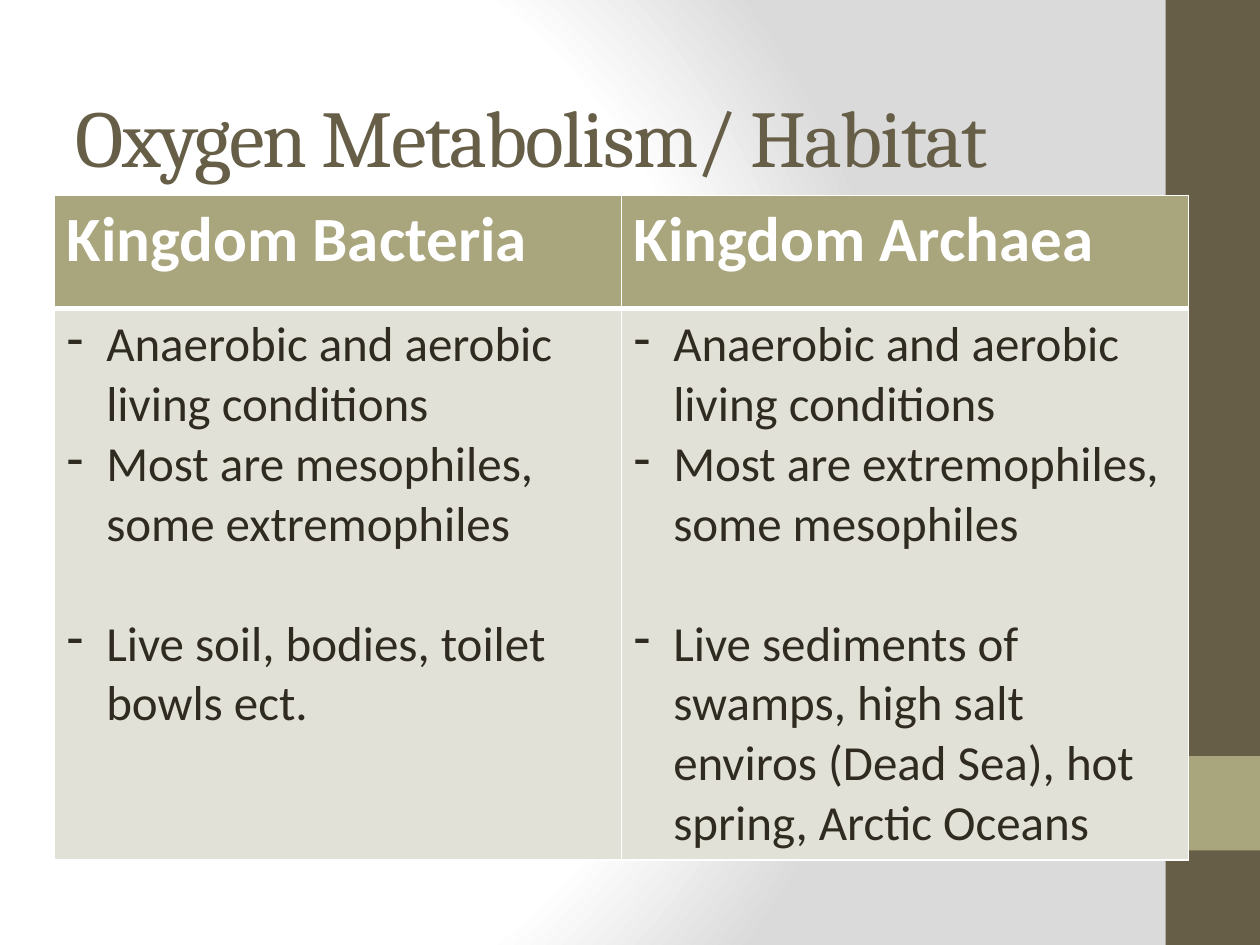
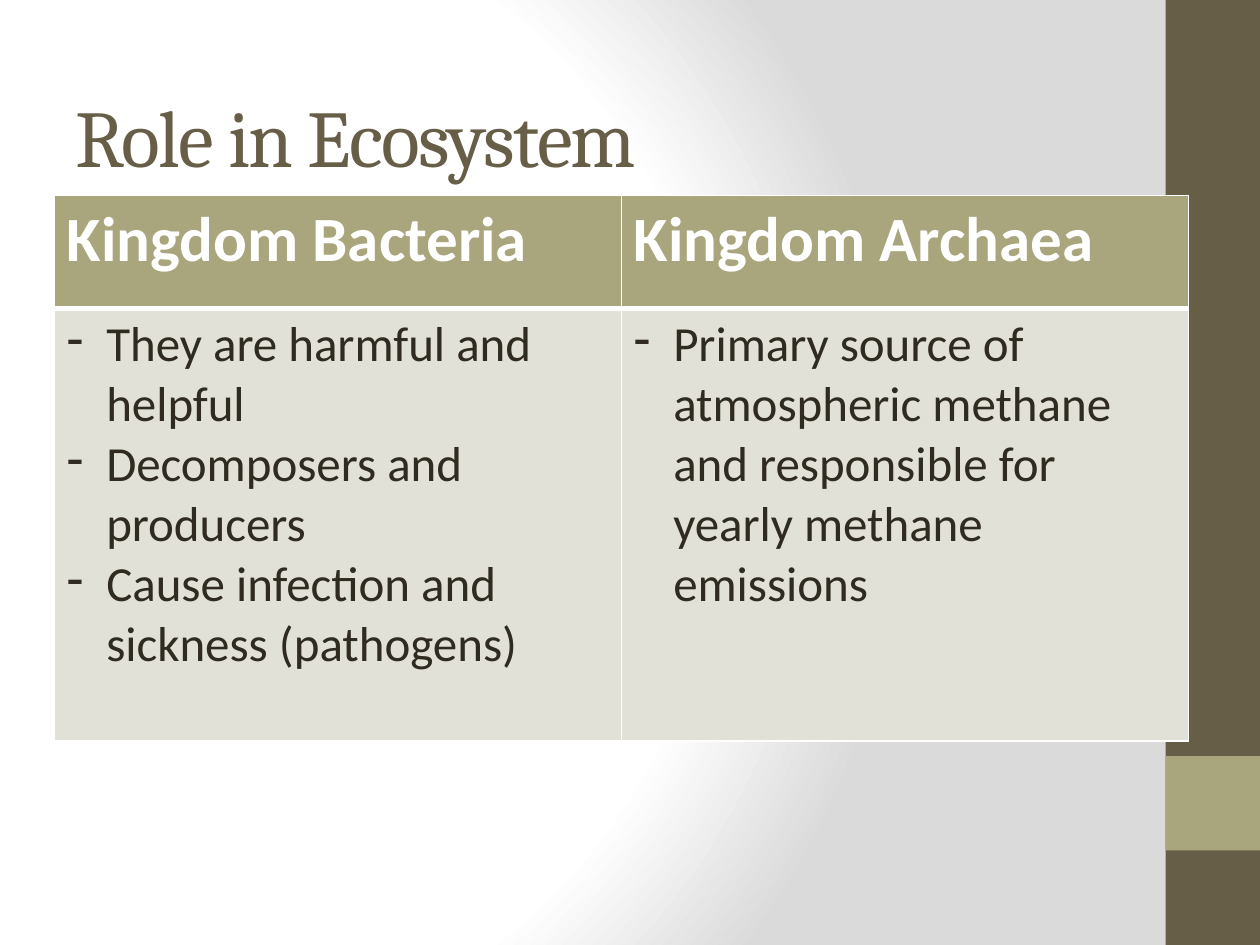
"""Build two slides that compare the kingdoms Bacteria and Archaea."""
from dataclasses import dataclass

from lxml import etree
from pptx import Presentation
from pptx.dml.color import RGBColor
from pptx.enum.shapes import MSO_SHAPE
from pptx.enum.text import MSO_ANCHOR, MSO_AUTO_SIZE, PP_ALIGN
from pptx.oxml import parse_xml
from pptx.oxml.ns import nsdecls, qn
from pptx.util import Pt

RECT = MSO_SHAPE.RECTANGLE
MIDDLE = MSO_ANCHOR.MIDDLE
NO_FIT = MSO_AUTO_SIZE.NONE
LEFT = PP_ALIGN.LEFT

COLORS = {
    "brown": "675E47",
    "olive": "A9A57C",
    "cream": "E2E1D7",
    "ink": "2F2B20",
    "white": "FFFFFF",
    "gray": "DADADA",
}
HEAD_FONT, BODY_FONT = "Cambria", "Calibri"
HEADS = ("Kingdom Bacteria", "Kingdom Archaea")
WIDTH, HEIGHT = 720, 540
COL_W, HEAD_H = 324, 64.8
INDENT, LINE_H = 22.5, 34.2
THIN, THICK = 1, 3


@dataclass(frozen=True)
class Band:
    """A filled strip on the right edge of the layout."""

    top: float
    height: float
    color: str


@dataclass(frozen=True)
class Topic:
    """A title, two lists of points, and the items set off by a gap."""

    title: str
    lists: tuple[tuple[str, ...], tuple[str, ...]]
    body_h: float
    gaps: tuple[int, ...] = ()


BANDS = (Band(0, HEIGHT, "brown"), Band(432, 54, "olive"))
TOPICS = (
    Topic(
        "Oxygen Metabolism/ Habitat",
        (
            (
                "Anaerobic and aerobic living conditions",
                "Most are mesophiles, some extremophiles",
                "Live soil, bodies, toilet bowls ect.",
            ),
            (
                "Anaerobic and aerobic living conditions",
                "Most are extremophiles, some mesophiles",
                "Live sediments of swamps, high salt enviros (Dead Sea), "
                "hot spring, Arctic Oceans",
            ),
        ),
        315,
        gaps=(2,),
    ),
    Topic(
        "Role in Ecosystem",
        (
            (
                "They are harmful and helpful",
                "Decomposers and producers",
                "Cause infection and sickness (pathogens)",
            ),
            (
                "Primary source of atmospheric methane and responsible "
                "for yearly methane emissions",
            ),
        ),
        247,
    ),
)


def color(name: str) -> RGBColor:
    """Look up a named colour."""
    return RGBColor.from_string(COLORS[name])


def style(para, font: str, size: float, tint: str, bold: bool = False) -> None:
    """Format every run of a paragraph."""
    for run in para.runs:
        run.font.name = font
        run.font.size = Pt(size)
        run.font.bold = bold
        run.font.color.rgb = color(tint)


def set_back(layout) -> None:
    """Give the layout its round white-to-gray gradient."""
    stops = "".join(
        f'<a:gs pos="{pos * 1000}"><a:srgbClr val="{COLORS[name]}"/></a:gs>'
        for pos, name in ((0, "white"), (75, "white"), (100, "gray"))
    )
    back = parse_xml(
        f'<p:bg {nsdecls("p", "a")}><p:bgPr><a:gradFill rotWithShape="1">'
        f'<a:gsLst>{stops}</a:gsLst><a:path path="circle"><a:fillToRect '
        'l="20000" t="50000" r="100000" b="50000"/></a:path></a:gradFill>'
        "<a:effectLst/></p:bgPr></p:bg>"
    )
    layout.element.cSld.insert(0, back)


def add_band(slide, band: Band) -> None:
    """Draw one strip of the right edge."""
    shape = slide.shapes.add_shape(
        RECT, Pt(666), Pt(band.top), Pt(54), Pt(band.height)
    )
    shape.shadow.inherit = False
    shape.fill.solid()
    shape.fill.fore_color.rgb = color(band.color)
    shape.line.fill.background()


def set_title(slide, text: str) -> None:
    """Place and format the title."""
    title = slide.shapes.title
    title.left, title.top = Pt(36), Pt(21.6)
    title.width, title.height = Pt(600), Pt(111.6)
    frame = title.text_frame
    frame.text = text
    frame.word_wrap = True
    frame.auto_size = NO_FIT
    frame.vertical_anchor = MIDDLE
    para = frame.paragraphs[0]
    para.alignment = LEFT
    style(para, HEAD_FONT, 46, "brown")
    for run in para.runs:
        run.font._element.set("spc", "-100")


def paint(cell, fill: str, top: float, bottom: float) -> None:
    """Set the white borders and the fill of a cell."""
    props = cell._tc.get_or_add_tcPr()
    sides = {"lnL": THIN, "lnR": THIN, "lnT": top, "lnB": bottom}
    for tag, width in sides.items():
        line = etree.SubElement(props, qn(f"a:{tag}"), w=str(Pt(width)))
        solid = etree.SubElement(line, qn("a:solidFill"))
        etree.SubElement(solid, qn("a:srgbClr"), val=COLORS["white"])
    cell.fill.solid()
    cell.fill.fore_color.rgb = color(fill)


def add_dash(para) -> None:
    """Turn a paragraph into a dashed list item."""
    props = para._p.get_or_add_pPr()
    props.set("marL", str(Pt(INDENT)))
    props.set("indent", str(-Pt(INDENT)))
    etree.SubElement(props, qn("a:buChar"), char="-")


def add_table(slide, topic: Topic) -> None:
    """Draw the table that compares both kingdoms."""
    frame = slide.shapes.add_table(
        2, 2, Pt(31), Pt(111.6), Pt(2 * COL_W), Pt(HEAD_H + topic.body_h)
    )
    table = frame.table
    table.horz_banding = False
    for row, height in zip(table.rows, (HEAD_H, topic.body_h)):
        row.height = Pt(height)
    for col, (head, items) in enumerate(zip(HEADS, topic.lists)):
        table.columns[col].width = Pt(COL_W)
        top, body = table.cell(0, col), table.cell(1, col)
        top.text_frame.text = head
        style(top.text_frame.paragraphs[0], BODY_FONT, 36, "white", True)
        paint(top, "olive", THIN, THICK)
        body.text_frame.text = "\n".join(items)
        for idx, para in enumerate(body.text_frame.paragraphs):
            add_dash(para)
            if idx in topic.gaps:
                para.space_before = Pt(LINE_H)
            style(para, BODY_FONT, 28, "ink")
        paint(body, "cream", THICK, THIN)


def main() -> None:
    """Build and save the deck."""
    deck = Presentation()
    deck.slide_width, deck.slide_height = Pt(WIDTH), Pt(HEIGHT)
    layout = deck.slide_layouts[5]
    set_back(layout)
    for topic in TOPICS:
        slide = deck.slides.add_slide(layout)
        for band in BANDS:
            add_band(slide, band)
        set_title(slide, topic.title)
        add_table(slide, topic)
    deck.save("out.pptx")


if __name__ == "__main__":
    main()
